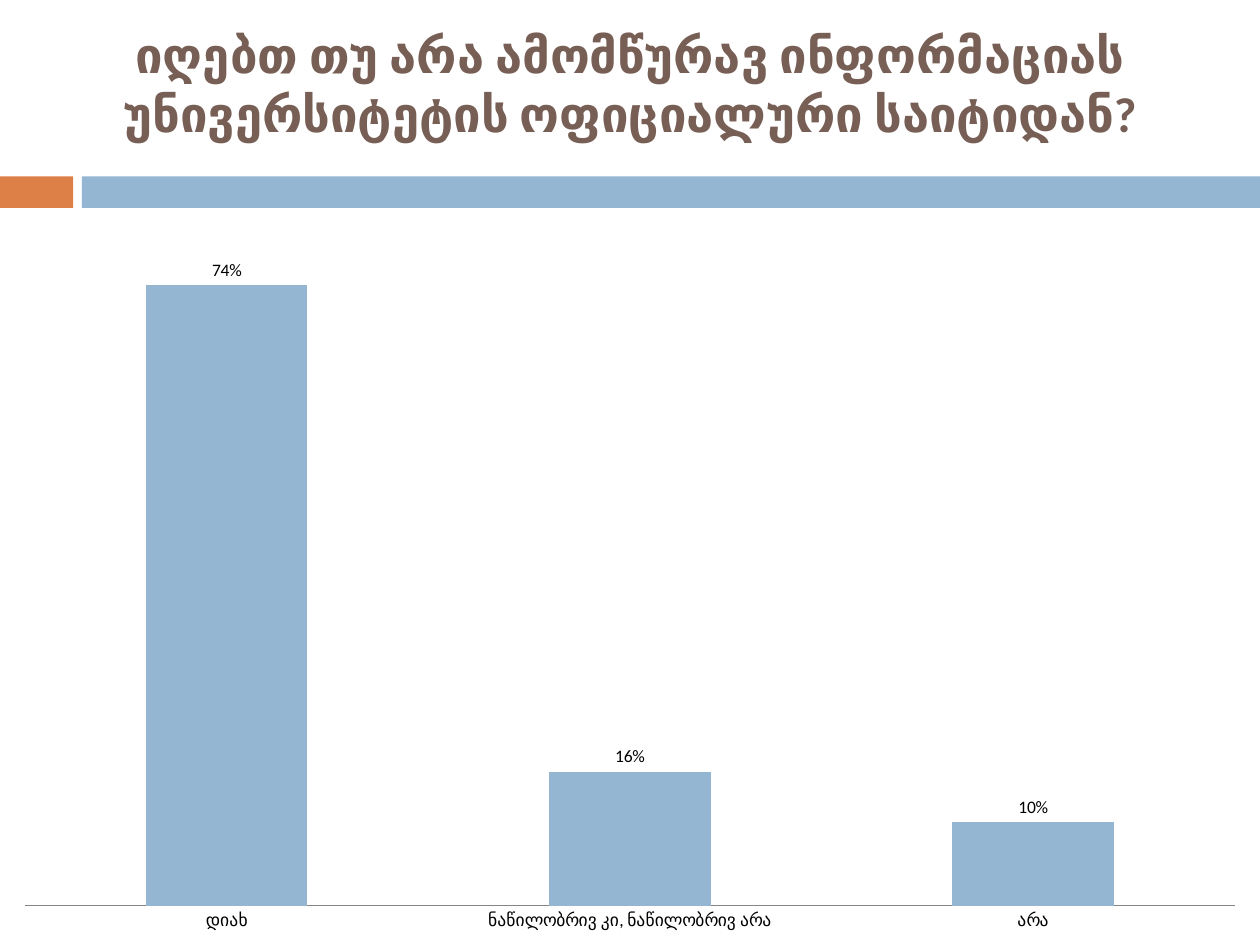
from pptx import Presentation
from pptx.chart.data import CategoryChartData
from pptx.dml.color import RGBColor
from pptx.enum.chart import XL_CHART_TYPE as ChartType, XL_LABEL_POSITION as LabelPosition
from pptx.enum.chart import XL_TICK_MARK as TickMark
from pptx.enum.shapes import MSO_SHAPE as Shape
from pptx.enum.text import MSO_ANCHOR as Anchor, PP_ALIGN as Align
from pptx.util import Inches, Pt

TITLE = "იღებთ თუ არა ამომწურავ ინფორმაციას უნივერსიტეტის ოფიციალური საიტიდან?"
ANSWERS = {"დიახ": 0.74, "ნაწილობრივ კი, ნაწილობრივ არა": 0.16, "არა": 0.10}

FONT = "Calibri"
BLUE, ORANGE, BROWN, BLACK, GREY = "94B6D2", "DD8047", "775F55", "000000", "868686"
WIDTH, HEIGHT = 10, 7.5
BAND_TOP, BAND_HEIGHT = 1.4, 0.25
BANDS = [(0, 0.58, ORANGE), (0.65, WIDTH - 0.65, BLUE)]  # left, width, colour
CHART_TOP = 1.75


def color(value):
    return RGBColor.from_string(value)


def add_band(slide, left, width, fill):
    band = slide.shapes.add_shape(Shape.RECTANGLE, Inches(left), Inches(BAND_TOP),
                                  Inches(width), Inches(BAND_HEIGHT))
    band.shadow.inherit = False
    band.fill.solid()
    band.fill.fore_color.rgb = color(fill)
    band.line.fill.background()


def add_title(slide):
    frame = slide.shapes.add_textbox(0, 0, Inches(WIDTH), Inches(1.33)).text_frame
    frame.word_wrap = True
    frame.vertical_anchor = Anchor.MIDDLE
    frame.text = TITLE
    paragraph = frame.paragraphs[0]
    paragraph.alignment = Align.CENTER
    font = paragraph.runs[0].font
    font.name, font.size, font.bold = FONT, Pt(28), True
    font.color.rgb = color(BROWN)


def add_answer_chart(slide):
    data = CategoryChartData(number_format="0%")
    data.categories = list(ANSWERS)
    data.add_series("Series 1", list(ANSWERS.values()))
    chart = slide.shapes.add_chart(ChartType.COLUMN_CLUSTERED, 0, Inches(CHART_TOP), Inches(WIDTH),
                                   Inches(HEIGHT - CHART_TOP), data).chart
    chart.has_title = False
    chart.has_legend = False
    chart.font.name, chart.font.size = FONT, Pt(10)
    chart.font.color.rgb = color(BLACK)

    chart.category_axis.major_tick_mark = TickMark.NONE
    chart.category_axis.format.line.color.rgb = color(GREY)
    value_axis = chart.value_axis
    value_axis.visible = False
    value_axis.has_major_gridlines = False
    value_axis.minimum_scale, value_axis.maximum_scale = 0, 0.8

    plot = chart.plots[0]
    plot.vary_by_categories = False
    plot.gap_width, plot.overlap = 150, -25
    fill = plot.series[0].format.fill
    fill.solid()
    fill.fore_color.rgb = color(BLUE)
    labels = plot.series[0].data_labels
    labels.show_value = True
    labels.number_format, labels.number_format_is_linked = "0%", False
    labels.position = LabelPosition.OUTSIDE_END


def main():
    presentation = Presentation()
    presentation.slide_width, presentation.slide_height = Inches(WIDTH), Inches(HEIGHT)
    slide = presentation.slides.add_slide(presentation.slide_layouts[6])
    for band in BANDS:
        add_band(slide, *band)
    add_title(slide)
    add_answer_chart(slide)
    presentation.save("out.pptx")


if __name__ == "__main__":
    main()
